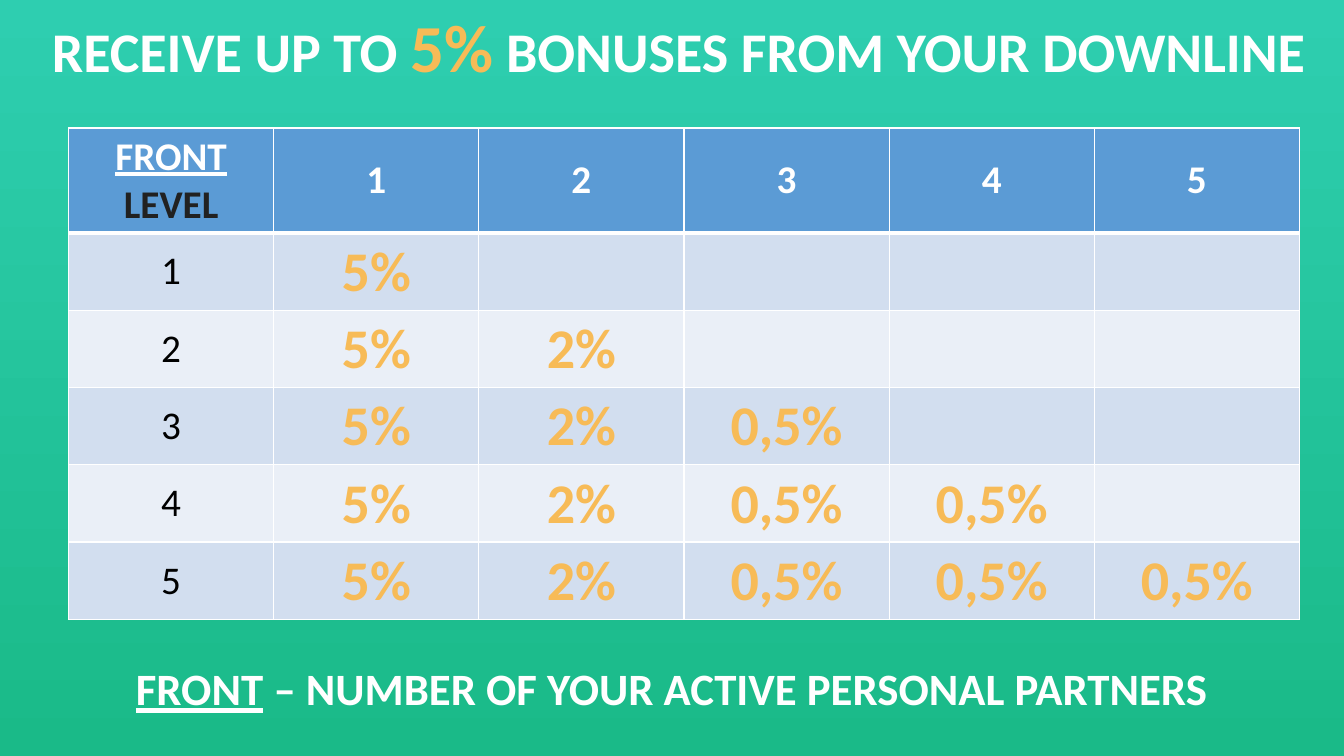
"""Build the downline bonus slide: a headline, a bonus table by front and level, and a footnote."""
from dataclasses import dataclass

from lxml.etree import SubElement
from pptx import Presentation
from pptx.dml.color import RGBColor
from pptx.enum.text import MSO_ANCHOR, MSO_AUTO_SIZE, PP_ALIGN
from pptx.oxml.ns import qn
from pptx.util import Inches, Pt

HEADLINE = ["RECEIVE UP TO ", "5%", " BONUSES FROM YOUR DOWNLINE"]
CORNER = ["FRONT", "LEVEL"]
FRONTS = ["1", "2", "3", "4", "5"]
BONUSES = ["5%", "2%", "0,5%", "0,5%", "0,5%"]
FOOTNOTE = ["FRONT", " – NUMBER OF YOUR ACTIVE PERSONAL PARTNERS"]


@dataclass(frozen=True)
class Theme:
    font: str = "Calibri"
    white: str = "FFFFFF"
    black: str = "000000"
    dark: str = "212121"
    accent: str = "F7BB57"
    header: str = "5B9BD5"
    bands: tuple = ("D2DEEF", "EAEFF7")
    backdrop: tuple = ("2ECEB0", "1ABA88")
    headline: int = 40
    headline_accent: int = 48
    label: int = 28
    bonus: int = 40
    footnote: int = 32
    rule: int = 1
    header_rule: int = 3


THEME = Theme()
SLIDE_W, SLIDE_H = Inches(13.33), Inches(7.5)
TABLE_LEFT, TABLE_TOP = Inches(0.68), Inches(1.27)
TABLE_W, TABLE_H = Inches(12.21), Inches(4.87)
HEADER_H = Inches(1.04)


def write(paragraph, text, size=THEME.label, color=THEME.white, bold=True, underline=False):
    """Add one formatted run to a centred paragraph."""
    paragraph.alignment = PP_ALIGN.CENTER
    run = paragraph.add_run()
    run.text = text
    font = run.font
    font.name, font.size, font.bold, font.underline = THEME.font, Pt(size), bold, underline
    font.color.rgb = RGBColor.from_string(color)


def fit_frame(frame):
    """Wrap the text from the top and let the shape follow its height."""
    frame.word_wrap = True
    frame.vertical_anchor = MSO_ANCHOR.TOP
    frame.auto_size = MSO_AUTO_SIZE.SHAPE_TO_FIT_TEXT
    return frame.paragraphs[0]


def style_cell(cell, fill, top, bottom):
    """Fill a cell and rule its four sides in white."""
    cell.vertical_anchor = MSO_ANCHOR.MIDDLE
    cell.fill.solid()
    cell.fill.fore_color.rgb = RGBColor.from_string(fill)
    properties = cell._tc.get_or_add_tcPr()
    sides = {"a:lnL": THEME.rule, "a:lnR": THEME.rule, "a:lnT": top, "a:lnB": bottom}
    for position, (side, width) in enumerate(sides.items()):
        line = SubElement(properties, qn(side), w=str(Pt(width)))
        SubElement(SubElement(line, qn("a:solidFill")), qn("a:srgbClr"), val=THEME.white)
        properties.insert(position, line)


def add_bonus_table(slide):
    """Lay out the stepped table where each level unlocks one more bonus."""
    count = len(FRONTS) + 1
    table = slide.shapes.add_table(count, count, TABLE_LEFT, TABLE_TOP, TABLE_W, TABLE_H).table
    for level, row in enumerate(table.rows):
        row.height = (TABLE_H - HEADER_H) // len(FRONTS) if level else HEADER_H
        fill = THEME.bands[(level - 1) % 2] if level else THEME.header
        top = THEME.header_rule if level == 1 else THEME.rule
        bottom = THEME.rule if level else THEME.header_rule
        for front, cell in enumerate(row.cells):
            style_cell(cell, fill, top, bottom)
            paragraph = cell.text_frame.paragraphs[0]
            if level == front == 0:
                cell.vertical_anchor = MSO_ANCHOR.TOP
                write(paragraph, CORNER[0], underline=True)
                write(cell.text_frame.add_paragraph(), CORNER[1], color=THEME.dark)
            elif level == 0:
                write(paragraph, FRONTS[front - 1])
            elif front == 0:
                write(paragraph, FRONTS[level - 1], color=THEME.black, bold=False)
            elif front <= level:
                write(paragraph, BONUSES[front - 1], size=THEME.bonus, color=THEME.accent)


def main():
    deck = Presentation()
    deck.slide_width, deck.slide_height = SLIDE_W, SLIDE_H
    slide = deck.slides.add_slide(deck.slide_layouts[5])

    backdrop = slide.background.fill
    backdrop.gradient()
    backdrop.gradient_angle = 270
    for stop, color, place in zip(backdrop.gradient_stops, THEME.backdrop, (0, 1)):
        stop.color.rgb = RGBColor.from_string(color)
        stop.position = place

    title = slide.shapes.title
    title.left, title.top, title.width, title.height = 0, 0, Inches(13.46), Inches(0.91)
    headline = fit_frame(title.text_frame)
    before, rate, after = HEADLINE
    write(headline, before, size=THEME.headline)
    write(headline, rate, size=THEME.headline_accent, color=THEME.accent)
    write(headline, after, size=THEME.headline)

    add_bonus_table(slide)

    footnote = fit_frame(
        slide.shapes.add_textbox(0, Inches(6.51), SLIDE_W, Inches(0.64)).text_frame)
    term, meaning = FOOTNOTE
    write(footnote, term, size=THEME.footnote, underline=True)
    write(footnote, meaning, size=THEME.footnote)

    deck.save("out.pptx")


if __name__ == "__main__":
    main()
